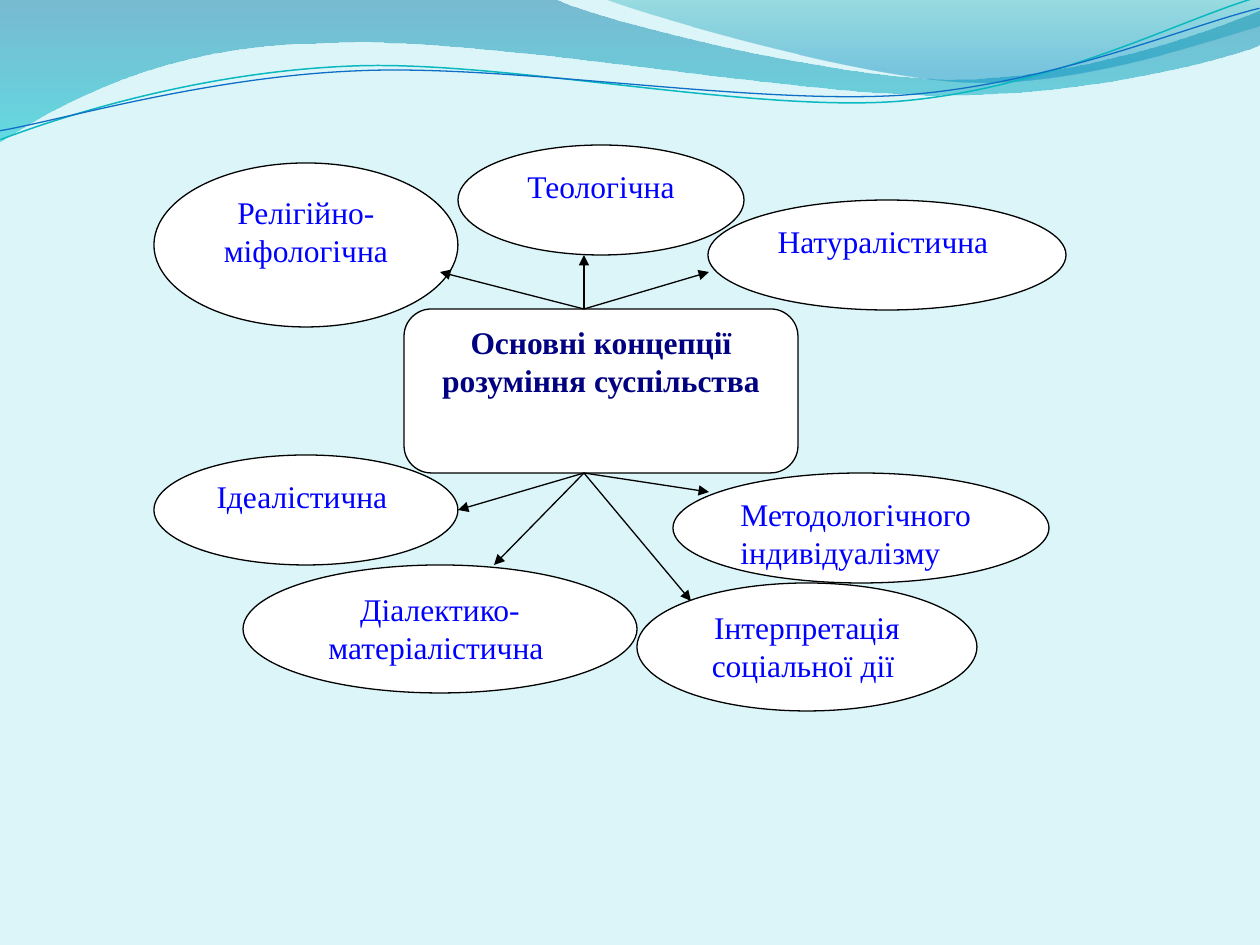
from lxml.etree import SubElement
from pptx import Presentation
from pptx.dml.color import RGBColor
from pptx.enum.shapes import MSO_CONNECTOR, MSO_SHAPE
from pptx.enum.text import MSO_ANCHOR, PP_ALIGN
from pptx.oxml.ns import qn
from pptx.util import Pt

PX = 914400 / 126
FONT = "Times New Roman"
PALE = RGBColor(0xDB, 0xF5, 0xF9)
WHITE = RGBColor(0xFF, 0xFF, 0xFF)
BLACK = RGBColor(0x00, 0x00, 0x00)
NAVY = RGBColor(0x00, 0x00, 0x80)
BLUE = RGBColor(0x00, 0x00, 0xFF)
TEAL_LINE = RGBColor(0x0A, 0xB8, 0xBF)
BLUE_LINE = RGBColor(0x0F, 0x6F, 0xC6)

BAND = [(-1, -1), (554, -1),
        (600, 21, 837, 79, 955, 79), (1074, 79, 1207, 33, 1260, 11), (1261, 45),
        (1239, 55, 1096, 96, 940, 95), (784, 95, 481, 35, 324, 43),
        (163, 44, 58, 105, -1, 142)]
GLOW = [(604, -1), (641, 14, 859, 78, 969, 82), (1079, 86, 1211, 40, 1260, 26), (1260, 0)]
TEAL_WAVE = [(-2, 110), (59, 90, 199, 52, 350, 53), (499, 53, 745, 118, 896, 114),
             (1049, 109, 1184, 45, 1260, 27)]
BLUE_WAVE = [(-2, 101), (57, 94, 207, 57, 357, 58), (509, 58, 750, 111, 902, 108),
             (1052, 104, 1189, 52, 1262, 38)]
WAVE_TILT = 357.3

FILLS = [
    (BAND, [(0, RGBColor(0x00, 0x74, 0xA1), 45), (1, RGBColor(0x00, 0xC6, 0xCF), 55)]),
    (GLOW, [(0, RGBColor(0x00, 0xA1, 0xA9), 30), (0.8, RGBColor(0x00, 0x8B, 0xBF), 45)]),
]
WAVES = [(TEAL_WAVE, TEAL_LINE, 0.85), (BLUE_WAVE, BLUE_LINE, 0.75)]

HUB = ("Основні концепції розуміння суспільства", (250, 164, 394, 164))
CONCEPTS = [
    ("Релігійно-міфологічна", (0, 18, 304, 164), PP_ALIGN.CENTER),
    ("Теологічна", (304, 0, 286, 110), PP_ALIGN.CENTER),
    ("Натуралістична ", (554, 55, 358, 110), PP_ALIGN.CENTER),
    ("Ідеалістична ", (0, 310, 304, 110), PP_ALIGN.CENTER),
    ("Діалектико-матеріалістична ", (89, 420, 394, 128), PP_ALIGN.CENTER),
    ("Методологічного індивідуалізму", (519, 328, 376, 110), PP_ALIGN.LEFT),
    ("Інтерпретація соціальної дії ", (483, 438, 340, 128), PP_ALIGN.CENTER),
]
ARROWS = {
    (430, 164): [(430, 110), (286, 127), (555, 127)],
    (430, 328): [(304, 365), (340, 420), (537, 456), (555, 347)],
}


def emu(px):
    """Turn px into EMU."""
    return round(px * PX)


def set_all(obj, values):
    """Set each named attribute of an object."""
    for name, value in values.items():
        setattr(obj, name, value)


def add_outline(shapes, path, x, y, close):
    """Add a freeform of lines and cubic curves, moved by x and y."""
    points = [(emu(x + step[i]), emu(y + step[i + 1]))
              for step in path for i in range(0, len(step), 2)]
    builder = shapes.build_freeform(*points[0])
    builder.add_line_segments(points[1:], close=close)
    sp = builder.convert_to_shape()
    sp.shadow.inherit = False
    outline = next(sp._element.spPr.iter(qn("a:path")))
    lines = iter(outline.findall(qn("a:lnTo")))
    for step in path[1:]:
        parts = [next(lines) for _ in range(len(step) // 2)]
        if len(parts) == 3:
            curve = SubElement(outline, qn("a:cubicBezTo"))
            parts[0].addprevious(curve)
            for part in parts:
                curve.append(part[0])
                outline.remove(part)
    return sp


def add_header(s, x, y):
    """Draw the translucent bands and thin waves, and move them to the master."""
    for path, stops in FILLS:
        sp = add_outline(s.shapes, path, x, y, True)
        sp.line.fill.background()
        sp.fill.gradient()
        sp.fill.gradient_angle = 270
        for stop, (position, color, _) in zip(sp.fill.gradient_stops, stops):
            stop.position = position
            stop.color.rgb = color
        for clr, (_, _, opacity) in zip(sp._element.spPr.iter(qn("a:srgbClr")), stops):
            SubElement(clr, qn("a:alpha")).set("val", str(opacity * 1000))
    waves = s.shapes.add_group_shape()
    for path, color, width in WAVES:
        sp = add_outline(waves.shapes, path, x, y, False)
        sp.rotation = WAVE_TILT
        sp.fill.background()
        sp.line.color.rgb = color
        sp.line.width = Pt(width)
    tree = s.slide_layout.slide_master.shapes._spTree
    for i, sp in enumerate(list(s.shapes)):
        for c in sp._element.iter(qn("p:cNvPr")):
            c.set("id", str(100 + int(c.get("id"))))
        tree.insert(2 + i, sp._element)


def add_node(shapes, kind, box, text, align, font):
    """Add a white outlined shape with its label at the top."""
    sp = shapes.add_shape(kind, *map(emu, box))
    sp.shadow.inherit = False
    sp.fill.solid()
    sp.fill.fore_color.rgb = WHITE
    sp.line.color.rgb = BLACK
    sp.line.width = Pt(0.75)
    tf = sp.text_frame
    set_all(tf, {"word_wrap": True, "vertical_anchor": MSO_ANCHOR.TOP})
    p = tf.paragraphs[0]
    p.alignment = align
    r = p.add_run()
    r.text = text
    set_all(r.font, {"name": FONT, "size": Pt(18), "bold": font["bold"]})
    r.font.color.rgb = font["color"]


def add_arrow(shapes, start, end):
    """Add a thin black line with an arrowhead at its end."""
    cxn = shapes.add_connector(MSO_CONNECTOR.STRAIGHT, *map(emu, start + end))
    cxn.line.color.rgb = BLACK
    cxn.line.width = Pt(0.75)
    SubElement(cxn.line._get_or_add_ln(), qn("a:tailEnd")).set("type", "triangle")
    SubElement(cxn._element.spPr, qn("a:effectLst"))


def add_diagram(s, x, y):
    """Draw the hub, the concepts around it and the arrows between them."""
    def place(box):
        """Move a box or point into the diagram."""
        return (x + box[0], y + box[1]) + box[2:]

    shapes = s.shapes.add_group_shape().shapes
    text, box = HUB
    add_node(shapes, MSO_SHAPE.ROUNDED_RECTANGLE, place(box), text, PP_ALIGN.CENTER,
             {"bold": True, "color": NAVY})
    for text, box, align in CONCEPTS:
        add_node(shapes, MSO_SHAPE.OVAL, place(box), text, align,
                 {"bold": False, "color": BLUE})
    for start, ends in ARROWS.items():
        for end in ends:
            add_arrow(shapes, place(start), place(end))


def main():
    """Build the slide and save it."""
    prs = Presentation()
    set_all(prs, {"slide_width": emu(1260), "slide_height": emu(945)})
    fill = prs.slide_master.background.fill
    fill.solid()
    fill.fore_color.rgb = PALE
    s = prs.slides.add_slide(prs.slide_layouts[6])
    add_header(s, 0, 0)
    add_diagram(s, 154, 145)
    prs.save("out.pptx")


if __name__ == "__main__":
    main()
